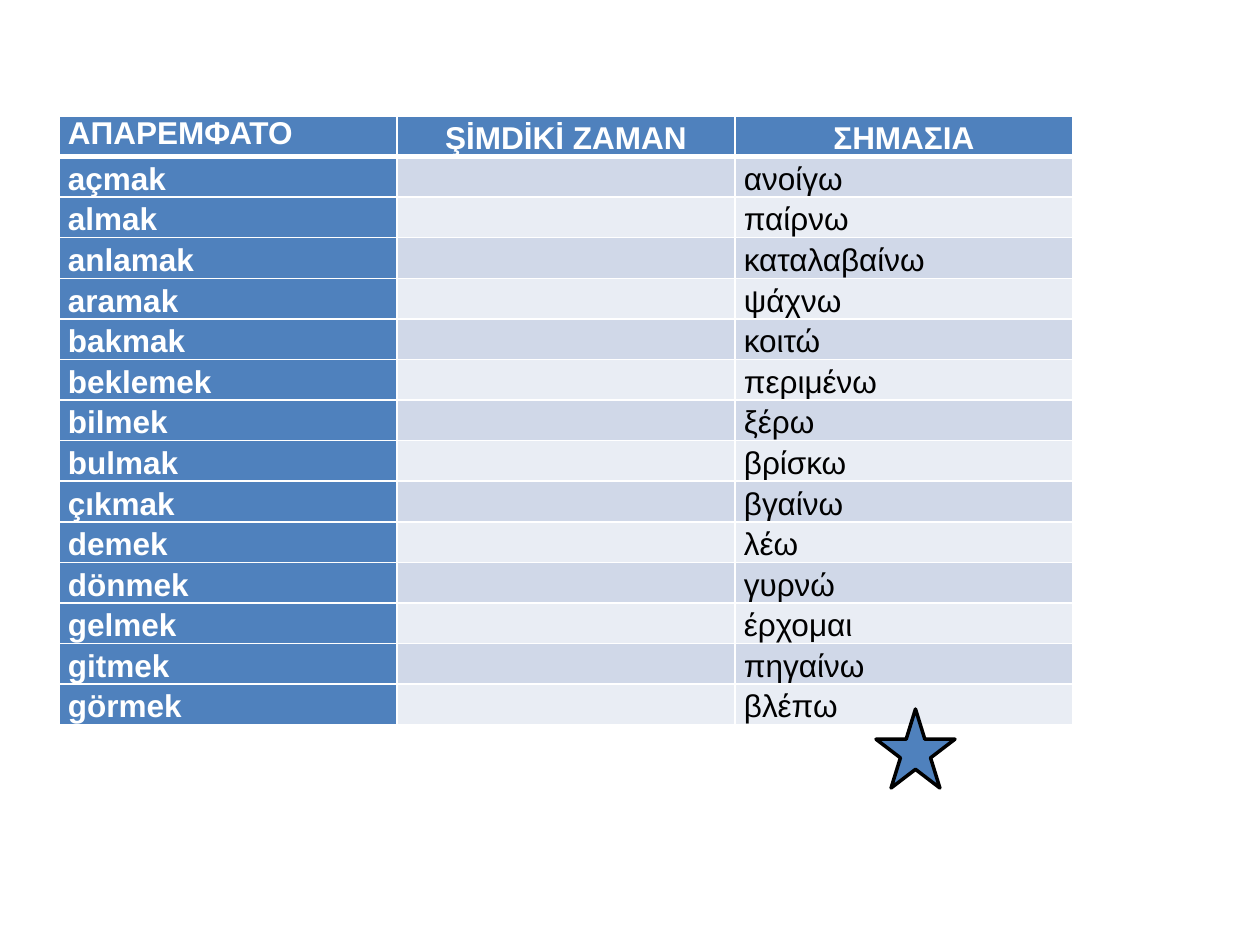
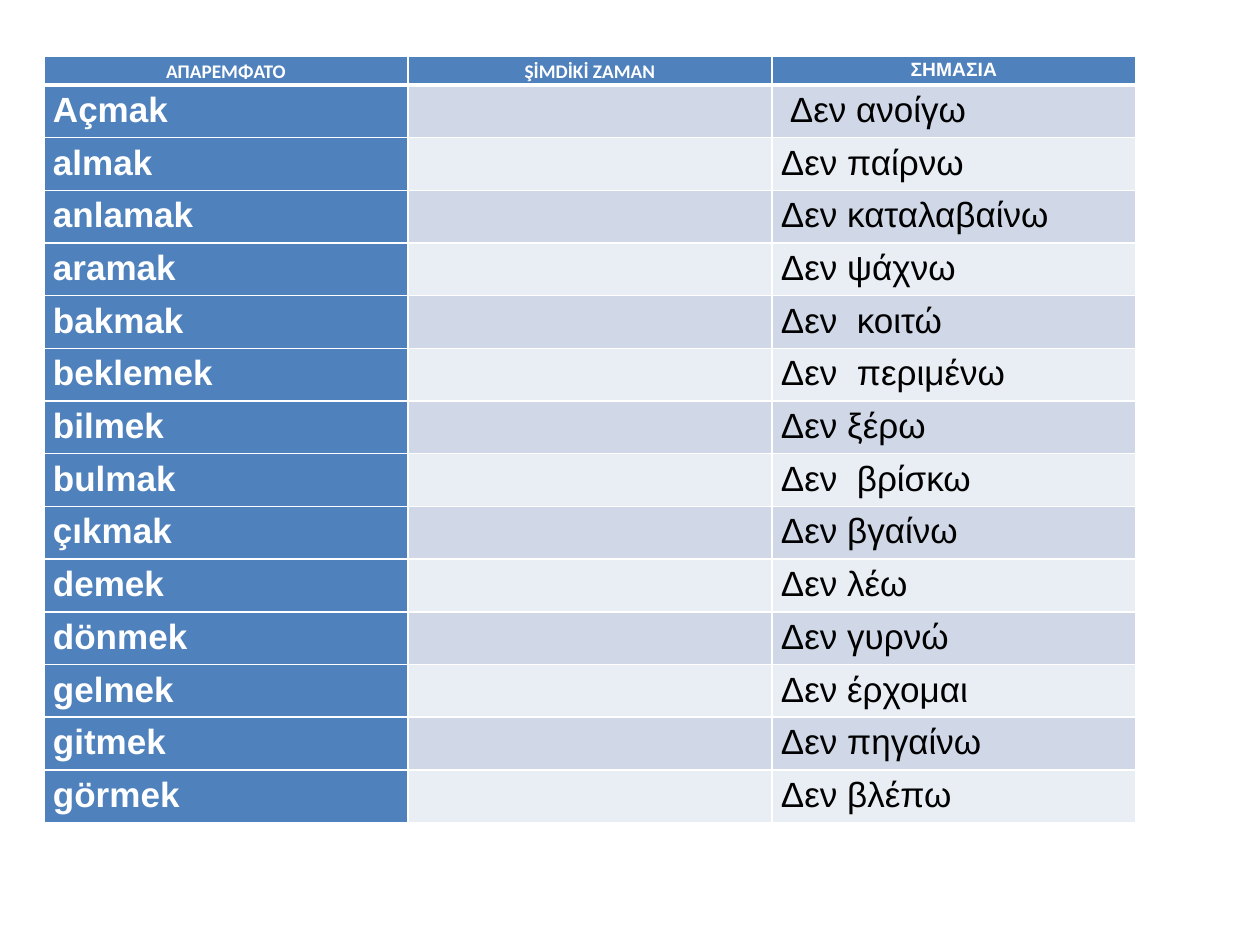
from dataclasses import dataclass

from lxml import etree
from pptx import Presentation
from pptx import util as u
from pptx.dml.color import RGBColor
from pptx.enum import shapes, text
from pptx.oxml import ns

SCALE = 914400 / 126
BLUE = RGBColor(0x4F, 0x81, 0xBD)
BANDS = RGBColor(0xD0, 0xD8, 0xE8), RGBColor(0xE9, 0xED, 0xF4)
WHITE = RGBColor(0xFF, 0xFF, 0xFF)
BLACK = RGBColor(0, 0, 0)
LEFT, MID = text.PP_ALIGN.LEFT, text.PP_ALIGN.CENTER
INSET = 9
HEADS = "ΑΠΑΡΕΜΦΑΤΟ", "ŞİMDİKİ ZAMAN", "ΣΗΜΑΣΙΑ"
VERBS = ["açmak", "almak", "anlamak", "aramak", "bakmak", "beklemek", "bilmek",
         "bulmak", "çıkmak", "demek", "dönmek", "gelmek", "gitmek", "görmek"]
GREEK = ["ανοίγω", "παίρνω", "καταλαβαίνω", "ψάχνω", "κοιτώ", "περιμένω", "ξέρω",
         "βρίσκω", "βγαίνω", "λέω", "γυρνώ", "έρχομαι", "πηγαίνω", "βλέπω"]
DENIED = ["Δεν ανοίγω", "Δεν παίρνω", "Δεν καταλαβαίνω", "Δεν ψάχνω", "Δεν  κοιτώ",
          "Δεν  περιμένω", "Δεν ξέρω", "Δεν  βρίσκω", "Δεν βγαίνω", "Δεν λέω",
          "Δεν γυρνώ", "Δεν έρχομαι", "Δεν πηγαίνω", "Δεν βλέπω"]


@dataclass
class Head:
    font: str = "Arial"
    align: text.PP_ALIGN = MID
    lead: float = 1.15


@dataclass
class Grid:
    left: int
    top: int
    width: int
    height: int
    first: int
    head_size: int
    size: int
    heads: list[Head]
    verbs: list[str]
    means: list[str]


GRIDS = [
    Grid(59, 116, 1014, 608, 40, 18, 18,
         [Head(align=LEFT, lead=1.0), Head(), Head()], VERBS, GREEK),
    Grid(44, 56, 1092, 767, 29, 11, 20,
         [Head("Calibri"), Head("Calibri"), Head()], ["Açmak", *VERBS[1:]], DENIED),
]


def px(n: float) -> u.Emu:
    return u.Emu(round(n * SCALE))


def write(cell, words: str, *, size: int, font: str = "Arial", color: RGBColor = WHITE,
          bold: bool = True, align: text.PP_ALIGN = LEFT, lead: float = 1.15) -> None:
    para = cell.text_frame.paragraphs[0]
    para.alignment = align
    para.line_spacing = lead
    run = para.add_run()
    run.text = words
    face = run.font
    face.name, face.size, face.bold = font, u.Pt(size), bold
    face.color.rgb = color


def edge(cell, row: int) -> None:
    props = cell._tc.get_or_add_tcPr()
    thick = {"T": 3 if row == 1 else 1, "B": 3 if row == 0 else 1}
    for side in "LRTB":
        line = etree.SubElement(props, ns.qn(f"a:ln{side}"), w=str(u.Pt(thick.get(side, 1))))
        fill = etree.SubElement(line, ns.qn("a:solidFill"))
        etree.SubElement(fill, ns.qn("a:srgbClr"), val=str(WHITE))


def draw(slide, grid: Grid) -> None:
    count = len(grid.verbs) + 1
    table = slide.shapes.add_table(count, 3, px(grid.left), px(grid.top),
                                   px(grid.width), px(grid.height)).table
    table.horz_banding = False
    for col in table.columns:
        col.width = px(grid.width / 3)
    body = (grid.height - grid.first) / (count - 1)
    for r, row in enumerate(table.rows):
        row.height = px(body if r else grid.first)
        for c, cell in enumerate(row.cells):
            cell.margin_left = cell.margin_right = px(INSET)
            cell.margin_top = cell.margin_bottom = 0
            edge(cell, r)
            cell.fill.solid()
            cell.fill.fore_color.rgb = BANDS[(r - 1) % 2] if r and c else BLUE
    for c, (words, head) in enumerate(zip(HEADS, grid.heads)):
        write(table.cell(0, c), words, size=grid.head_size, font=head.font,
              align=head.align, lead=head.lead)
    for r, (verb, mean) in enumerate(zip(grid.verbs, grid.means), 1):
        write(table.cell(r, 0), verb, size=grid.size)
        write(table.cell(r, 2), mean, size=grid.size, color=BLACK, bold=False)
    if grid.means is DENIED:
        table.cell(1, 2).margin_left = px(INSET + 9)


def star(slide) -> None:
    shape = slide.shapes.add_shape(shapes.MSO_SHAPE.STAR_5_POINT,
                                   px(876), px(709), px(79), px(79))
    shape.shadow.inherit = False
    shape.fill.solid()
    shape.fill.fore_color.rgb = BLUE
    shape.line.color.rgb = BLACK
    shape.line.width = u.Pt(2)


def main() -> None:
    deck = Presentation()
    deck.slide_width, deck.slide_height = px(1260), px(945)
    pages = [deck.slides.add_slide(deck.slide_layouts[6]) for _ in GRIDS]
    for page, grid in zip(pages, GRIDS):
        draw(page, grid)
    star(pages[0])
    deck.save("out.pptx")


if __name__ == "__main__":
    main()
